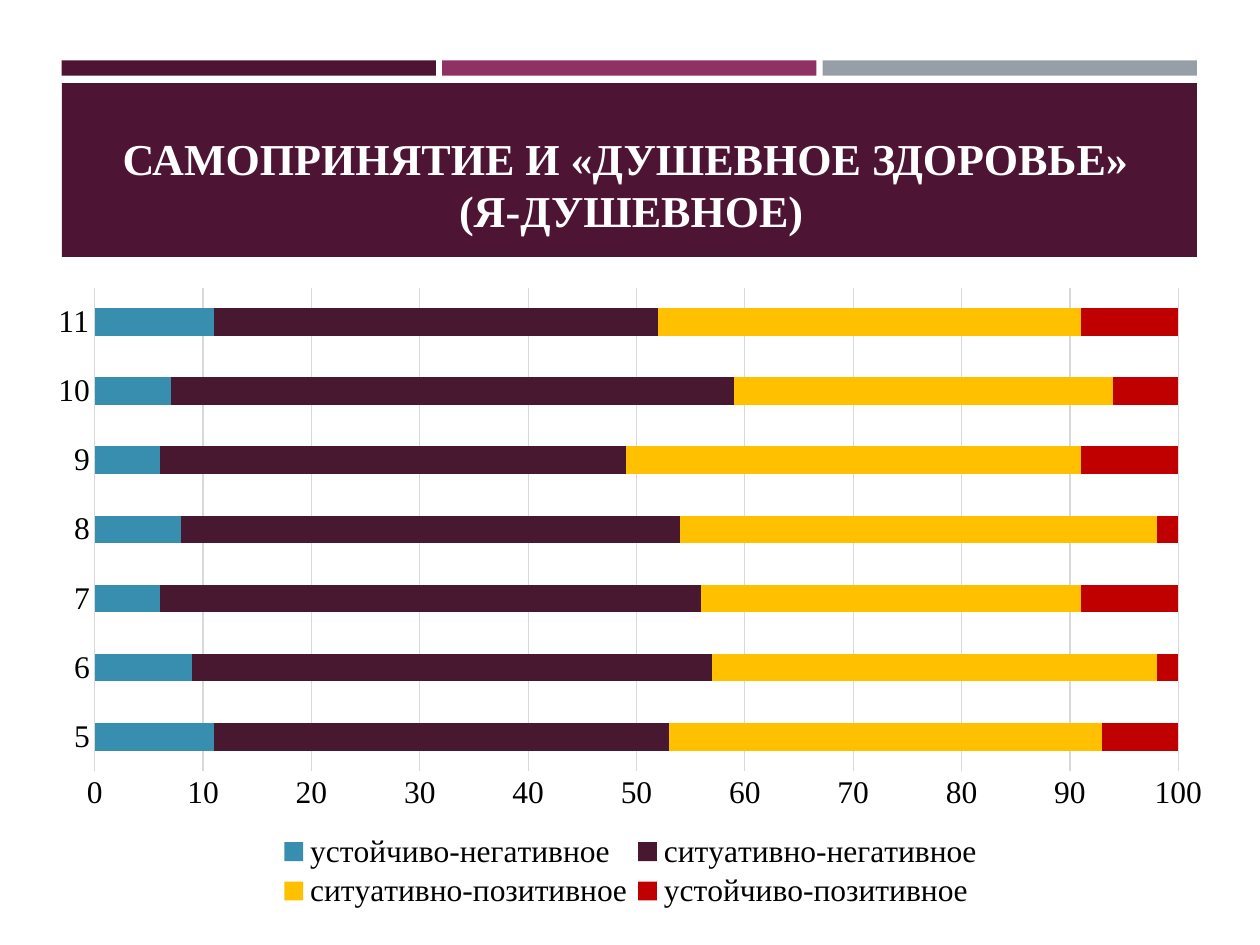
"""Build a slide with a title band and a stacked bar chart of self-acceptance by grade."""
import pptx
import pptx.chart.data
import pptx.dml.color
import pptx.enum.chart
import pptx.enum.shapes
import pptx.enum.text
import pptx.oxml
import pptx.oxml.ns
import pptx.util

Inches = pptx.util.Inches
Pt = pptx.util.Pt
RGB = pptx.dml.color.RGBColor.from_string
qn = pptx.oxml.ns.qn

FONT = "Times New Roman"
COLORS = {
    "plum": "4D1434", "berry": "903163", "gray": "969FA7", "white": "FFFFFF",
    "black": "000000", "grid": "D9D9D9", "blue": "388EAF", "dark": "481831",
    "yellow": "FFC000", "red": "C00000",
}


def style_font(font, size, color):
    font.name = FONT
    font.size = Pt(size)
    font.color.rgb = RGB(COLORS[color])


def make_layout(x, y, w, h, inner=False):
    target = '<c:layoutTarget val="inner"/>' if inner else ""
    return pptx.oxml.parse_xml(
        f'<c:layout {pptx.oxml.ns.nsdecls("c")}><c:manualLayout>{target}'
        '<c:xMode val="edge"/><c:yMode val="edge"/>'
        f'<c:x val="{x}"/><c:y val="{y}"/><c:w val="{w}"/><c:h val="{h}"/>'
        '</c:manualLayout></c:layout>'
    )


prs = pptx.Presentation()
prs.slide_width, prs.slide_height = Inches(10), Inches(7.5)
s = prs.slides.add_slide(prs.slide_layouts[5])

bands = [(0.49 + i * 3.02, 0.48, 2.97, 0.12, c) for i, c in enumerate(("plum", "berry", "gray"))]
bands.append((0.49, 0.66, 9.01, 1.38, "plum"))
for x, y, w, h, color in bands:
    sp = s.shapes.add_shape(pptx.enum.shapes.MSO_SHAPE.RECTANGLE, Inches(x), Inches(y), Inches(w), Inches(h))
    sp.shadow.inherit = False
    sp.fill.solid()
    sp.fill.fore_color.rgb = RGB(COLORS[color])
    sp.line.fill.background()

title = s.shapes.title
s.shapes.element.append(title.element)
title.left, title.top, title.width, title.height = Inches(0.64), Inches(0.75), Inches(8.74), Inches(1.18)
tf = title.text_frame
tf.word_wrap = True
tf.auto_size = pptx.enum.text.MSO_AUTO_SIZE.NONE
tf.vertical_anchor = pptx.enum.text.MSO_ANCHOR.BOTTOM
p = tf.paragraphs[0]
p.alignment = pptx.enum.text.PP_ALIGN.CENTER
for i, line in enumerate(("САМОПРИНЯТИЕ И «ДУШЕВНОЕ ЗДОРОВЬЕ» ", "(Я-ДУШЕВНОЕ)")):
    if i:
        p.add_line_break()
    r = p.add_run()
    r.text = line
    style_font(r.font, 25.2, "white")
    r.font.bold = True

series = [
    ("устойчиво-негативное", (11, 9, 6, 8, 6, 7, 11), "blue"),
    ("ситуативно-негативное", (42, 48, 50, 46, 43, 52, 41), "dark"),
    ("ситуативно-позитивное", (40, 41, 35, 44, 42, 35, 39), "yellow"),
    ("устойчиво-позитивное", (7, 2, 9, 2, 9, 6, 9), "red"),
]
data = pptx.chart.data.CategoryChartData()
data.categories = [str(grade) for grade in range(5, 12)]
for name, values, color in series:
    data.add_series(name, values)
chart = s.shapes.add_chart(
    pptx.enum.chart.XL_CHART_TYPE.BAR_STACKED,
    Inches(0.28), Inches(2.18), Inches(9.45), Inches(5.12), data,
).chart
style_font(chart.font, 18, "black")
chart.has_title = False

plot = chart.plots[0]
plot.gap_width = 150
plot.overlap = 100
plot.vary_by_categories = False
for ser, (name, values, color) in zip(plot.series, series):
    ser.format.fill.solid()
    ser.format.fill.fore_color.rgb = RGB(COLORS[color])

cat_axis, val_axis = chart.category_axis, chart.value_axis
for axis in (cat_axis, val_axis):
    axis.major_tick_mark = axis.minor_tick_mark = pptx.enum.chart.XL_TICK_MARK.NONE
    style_font(axis.tick_labels.font, 18, "black")
val_axis.minimum_scale, val_axis.maximum_scale, val_axis.major_unit = 0, 100, 10
val_axis.has_major_gridlines = True
val_axis.format.line.fill.background()
for line in (cat_axis.format.line, val_axis.major_gridlines.format.line):
    line.color.rgb = RGB(COLORS["grid"])
    line.width = Pt(0.75)

chart.has_legend = True
legend = chart.legend
legend.position = pptx.enum.chart.XL_LEGEND_POSITION.BOTTOM
legend.include_in_layout = False
style_font(legend.font, 18, "black")

plot_area = chart.element.find(".//" + qn("c:plotArea"))
for old in chart.element.findall(".//" + qn("c:layout")):
    old.getparent().remove(old)
plot_area.insert(0, make_layout(0.05, 0.02, 0.91, 0.75, inner=True))
chart.element.find(".//" + qn("c:legendPos")).addnext(make_layout(0.2, 0.86, 0.6, 0.13))

prs.save("out.pptx")
